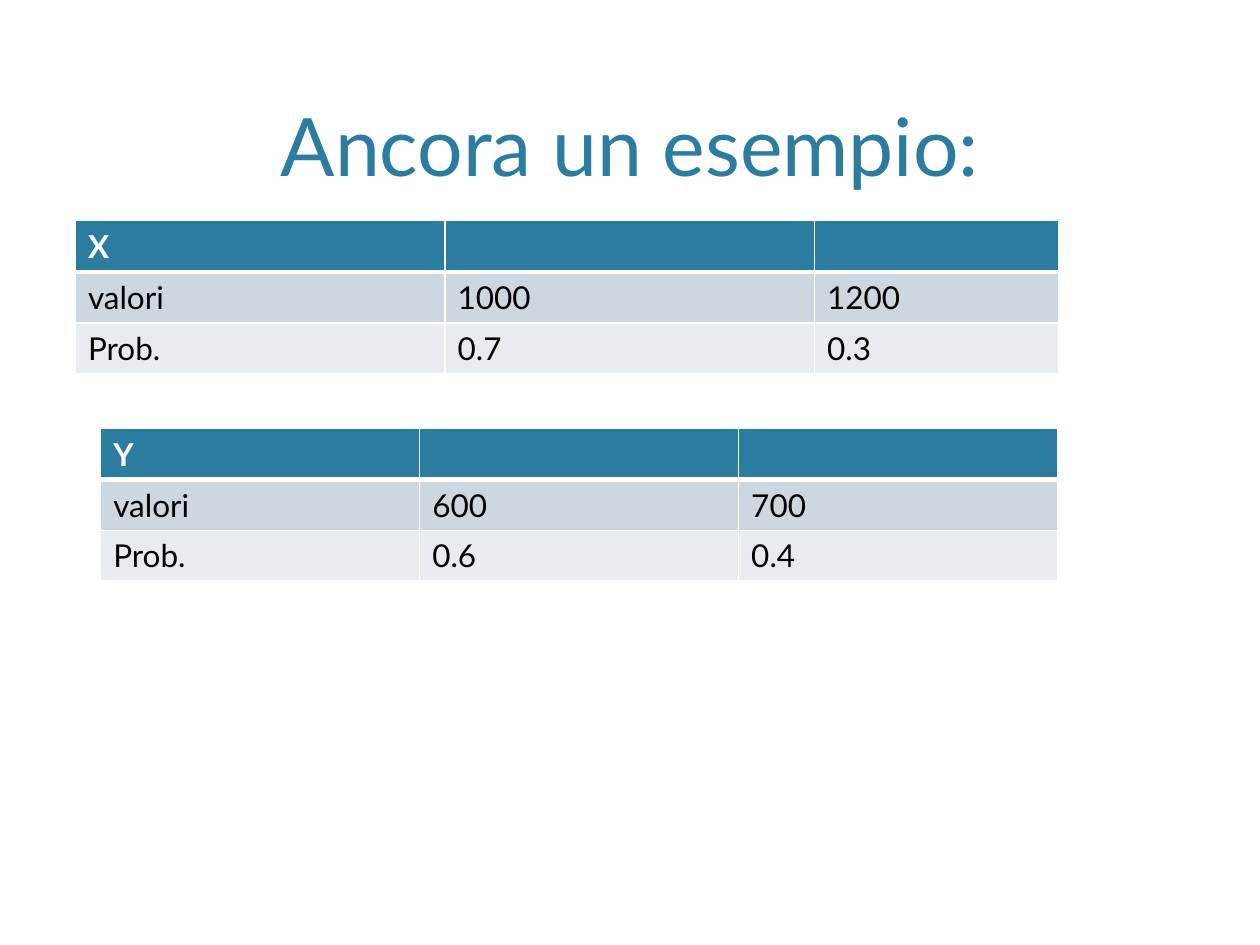
from lxml import etree
from pptx import Presentation
from pptx.dml.color import RGBColor
from pptx.enum import text as txt
from pptx.oxml import ns
from pptx.util import Cm, Pt

COLORS = {
    "accent": "2C7C9F",
    "band_dark": "CDD7DF",
    "band_light": "E8ECF0",
    "white": "FFFFFF",
    "black": "000000",
}
FONT = "Lato"


def rgb(name):
    return RGBColor.from_string(COLORS[name])


def write(frame, content, size=18, color="black", bold=False,
          align=txt.PP_ALIGN.LEFT):
    """Put formatted text in a text frame."""
    paragraph = frame.paragraphs[0]
    paragraph.alignment = align
    paragraph.font.size = Pt(size)
    if content:
        run = paragraph.add_run()
        run.text = content
        run.font.name = FONT
        run.font.size = Pt(size)
        run.font.bold = bold
        run.font.color.rgb = rgb(color)


def add_borders(cell, widths):
    """Draw white cell borders; widths in points by side."""
    properties = cell._tc.get_or_add_tcPr()
    for side, width in widths.items():
        line = etree.SubElement(properties, ns.qn(f"a:ln{side}"), w=str(Pt(width)))
        fill = etree.SubElement(line, ns.qn("a:solidFill"))
        etree.SubElement(fill, ns.qn("a:srgbClr"), val=COLORS["white"])


def place_title(slide, content, left, top, width, height):
    title = slide.shapes.title
    title.left, title.top = Cm(left), Cm(top)
    title.width, title.height = Cm(width), Cm(height)
    title.text_frame.word_wrap = True
    title.text_frame.vertical_anchor = txt.MSO_ANCHOR.BOTTOM
    write(title.text_frame, content, size=46, color="accent",
          align=txt.PP_ALIGN.CENTER)


def add_distribution(slide, variable, values, probabilities,
                     left, top, column_widths, row_height):
    """Table of a random variable: header, values, probabilities."""
    rows = [[variable, "", ""], ["valori", *values], ["Prob.", *probabilities]]
    fills = ["accent", "band_dark", "band_light"]
    table = slide.shapes.add_table(
        len(rows), len(column_widths), Cm(left), Cm(top),
        Cm(sum(column_widths)), Cm(row_height * len(rows))).table
    for column, width in zip(table.columns, column_widths):
        column.width = Cm(width)
    for r, (row, fill) in enumerate(zip(rows, fills)):
        table.rows[r].height = Cm(row_height)
        header = r == 0
        for c, content in enumerate(row):
            cell = table.cell(r, c)
            add_borders(cell, {"L": 1, "R": 1, "T": 3 if r == 1 else 1,
                               "B": 3 if header else 1})
            cell.fill.solid()
            cell.fill.fore_color.rgb = rgb(fill)
            write(cell.text_frame, content, bold=header,
                  color="white" if header else "black")


def main():
    deck = Presentation()
    deck.slide_width, deck.slide_height = Cm(25.4), Cm(19.05)
    slide = deck.slides.add_slide(deck.slide_layouts[5])

    # Title
    place_title(slide, "Ancora un esempio:", 1.52, 0.3, 22.35, 3.71)

    # Distributions of X and Y
    add_distribution(slide, "X", ["1000", "1200"], ["0.7", "0.3"],
                     1.52, 4.45, [7.45, 7.45, 4.93], 1.03)
    add_distribution(slide, "Y", ["600", "700"], ["0.6", "0.4"],
                     2.03, 8.64, [6.43] * 3, 1.02)

    deck.save("out.pptx")


if __name__ == "__main__":
    main()
